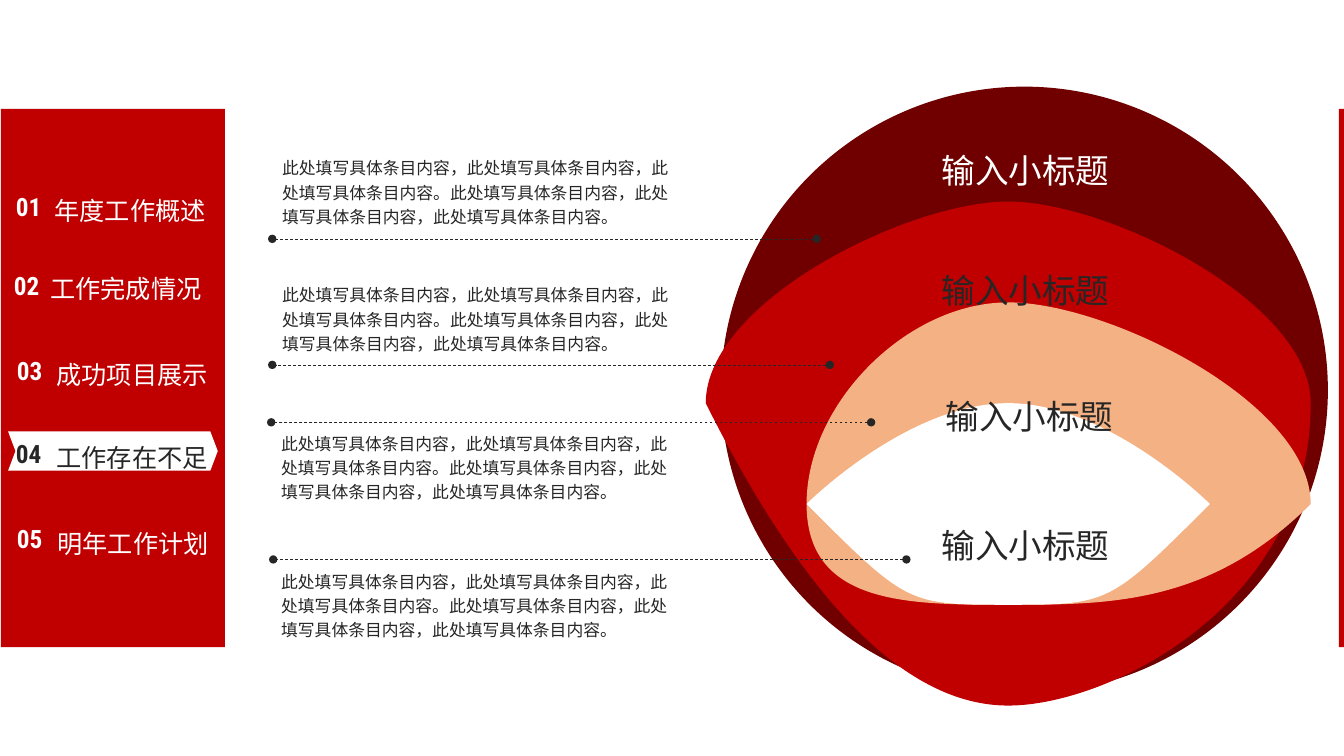
from dataclasses import dataclass

from lxml import etree
from pptx import Presentation
from pptx.dml.color import RGBColor
from pptx.enum.dml import MSO_LINE
from pptx.enum.shapes import MSO_CONNECTOR, MSO_SHAPE
from pptx.enum.text import MSO_AUTO_SIZE, PP_ALIGN
from pptx.oxml.ns import qn
from pptx.slide import Slide
from pptx.util import Inches, Pt

RECTANGLE, CHEVRON, OVAL = MSO_SHAPE.RECTANGLE, MSO_SHAPE.CHEVRON, MSO_SHAPE.OVAL
STRAIGHT, DASH = MSO_CONNECTOR.STRAIGHT, MSO_LINE.DASH
LEFT, CENTER = PP_ALIGN.LEFT, PP_ALIGN.CENTER
GROW = MSO_AUTO_SIZE.SHAPE_TO_FIT_TEXT
BLANK_LAYOUT = 6


@dataclass(frozen=True)
class Theme:
    red: str = "C00000"
    dark_red: str = "700000"
    peach: str = "F4B183"
    white: str = "FFFFFF"
    ink: str = "262626"
    number_font: str = "Roboto Condensed"
    menu_font: str = "Open Sans"
    label_font: str = "Noto Sans CJK SC"
    body_font: str = "Calibri"
    menu_size: int = 18
    label_size: int = 24
    body_size: int = 12


THEME = Theme()


@dataclass(frozen=True)
class TextStyle:
    font: str
    size: int
    color: str
    bold: bool = False
    align: PP_ALIGN = LEFT
    spacing: float = 1.0
    wrap: bool = True


@dataclass(frozen=True)
class MenuItem:
    number: str
    title: str
    number_left: float
    number_top: float
    title_left: float
    title_top: float
    color: str = THEME.white


@dataclass(frozen=True)
class Layer:
    """Closed outline: a start point, then three Bézier points per curve."""
    color: str
    points: tuple[tuple[float, float], ...]


@dataclass(frozen=True)
class Callout:
    text_left: float
    text_top: float
    line_left: float
    line_right: float
    line_y: float


@dataclass(frozen=True)
class Label:
    left: float
    top: float
    color: str = THEME.ink
    height: float = 0.5


BODY_TEXT = ("此处填写具体条目内容，此处填写具体条目内容，此处填写具体条目内容。"
             "此处填写具体条目内容，此处填写具体条目内容，此处填写具体条目内容。")
LABEL_TEXT = "输入小标题"

MENU = (
    MenuItem("01", "年度工作概述", 0.06, 1.85, 0.27, 1.74),
    MenuItem("02", "工作完成情况", 0.04, 2.63, 0.23, 2.51),
    MenuItem("03", "成功项目展示", 0.07, 3.48, 0.29, 3.37),
    MenuItem("04", "工作存在不足", 0.06, 4.3, 0.29, 4.19, THEME.ink),
    MenuItem("05", "明年工作计划", 0.07, 5.14, 0.3, 5.04),
)
LAYERS = (
    Layer(THEME.red, (
        (7.46, 4.44), (7.7, 5.7), (8.82, 6.66), (10.16, 6.66),
        (11.49, 6.66), (12.62, 5.7), (12.86, 4.44),
        (13.07, 3.33), (11.49, 2.22), (10.16, 2.22),
        (8.82, 2.22), (7.27, 3.46), (7.46, 4.44))),
    Layer(THEME.peach, (
        (7.91, 4.8), (8.27, 5.7), (9.17, 6.32), (10.21, 6.32),
        (11.24, 6.32), (12.16, 5.7), (12.51, 4.8),
        (12.7, 4.3), (11.24, 3.26), (10.21, 3.26),
        (9.17, 3.26), (7.74, 4.37), (7.91, 4.8))),
    Layer(THEME.white, (
        (10.18, 5.96), (10.85, 5.96), (11.48, 5.66), (11.87, 5.17),
        (12.12, 4.87), (10.85, 4.39), (10.18, 4.39),
        (9.49, 4.39), (8.19, 4.83), (8.47, 5.17),
        (8.88, 5.66), (9.49, 5.96), (10.18, 5.96))),
)
CALLOUTS = (
    Callout(2.7, 1.48, 2.7, 8.1, 2.37),
    Callout(2.7, 2.74, 2.7, 8.23, 3.62),
    Callout(2.69, 4.21, 2.69, 8.64, 4.19),
    Callout(2.69, 5.58, 2.71, 8.99, 5.55),
)
LABELS = (
    Label(9.24, 1.44, THEME.white),
    Label(9.24, 2.63),
    Label(9.28, 3.88, height=0.91),
    Label(9.24, 5.16),
)


def paint(shape, color: str) -> None:
    shape.shadow.inherit = False
    shape.fill.solid()
    shape.fill.fore_color.rgb = RGBColor.from_string(color)
    shape.line.fill.background()


def add_block(slide: Slide, kind: MSO_SHAPE, left: float, top: float,
              width: float, height: float, color: str):
    block = slide.shapes.add_shape(
        kind, Inches(left), Inches(top), Inches(width), Inches(height))
    paint(block, color)
    return block


def add_text(slide: Slide, text: str, left: float, top: float,
             width: float, height: float, style: TextStyle) -> None:
    frame = slide.shapes.add_textbox(
        Inches(left), Inches(top), Inches(width), Inches(height)).text_frame
    frame.word_wrap = style.wrap
    frame.auto_size = GROW
    frame.text = text
    paragraph = frame.paragraphs[0]
    paragraph.alignment = style.align
    paragraph.line_spacing = style.spacing
    font = paragraph.runs[0].font
    font.name, font.size, font.bold = style.font, Pt(style.size), style.bold
    font.color.rgb = RGBColor.from_string(style.color)
    latin = paragraph.runs[0]._r.rPr.find(qn("a:latin"))
    east_asian = etree.Element(qn("a:ea"), typeface=style.font)
    latin.addnext(east_asian)


def add_layer(slide: Slide, layer: Layer) -> None:
    start, *rest = layer.points
    builder = slide.shapes.build_freeform(*start, scale=Inches(1))
    builder.add_line_segments(rest, close=True)
    outline = builder.convert_to_shape()
    paint(outline, layer.color)
    # Turn every three straight segments into one Bézier curve
    segments = list(outline._element.iter(qn("a:lnTo")))
    for first in range(0, len(rest), 3):
        curve = etree.Element(qn("a:cubicBezTo"))
        segments[first].addprevious(curve)
        for segment in segments[first:first + 3]:
            curve.append(segment[0])
            segment.getparent().remove(segment)


def add_leader(slide: Slide, callout: Callout) -> None:
    y = Inches(callout.line_y)
    leader = slide.shapes.add_connector(
        STRAIGHT, Inches(callout.line_right), y, Inches(callout.line_left), y)
    leader.line.color.rgb = RGBColor.from_string(THEME.ink)
    leader.line.width = Pt(0.5)
    leader.line.dash_style = DASH
    for end in ("a:headEnd", "a:tailEnd"):
        etree.SubElement(leader.line._ln, qn(end), type="oval")
    etree.SubElement(leader._element.spPr, qn("a:effectLst"))


def main() -> None:
    presentation = Presentation()
    presentation.slide_width = Inches(13.33)
    presentation.slide_height = Inches(7.5)
    slide = presentation.slides.add_slide(presentation.slide_layouts[BLANK_LAYOUT])

    # Side menu with the current section marked
    add_block(slide, RECTANGLE, 0.01, 1.08, 2.22, 5.34, THEME.red)
    marker = add_block(slide, CHEVRON, 0.08, 4.28, 2.08, 0.39, THEME.white)
    marker.adjustments[0] = 0.189
    for item in MENU:
        number_style = TextStyle(THEME.number_font, THEME.menu_size, item.color, bold=True)
        title_style = TextStyle(THEME.menu_font, THEME.menu_size, item.color,
                                align=CENTER, spacing=1.5)
        add_text(slide, item.number, item.number_left, item.number_top, 0.56, 0.4, number_style)
        add_text(slide, item.title, item.title_left, item.title_top, 2.04, 0.5, title_style)

    # Nested layers
    add_block(slide, OVAL, 7.15, 0.86, 6.02, 6.02, THEME.dark_red)
    for layer in LAYERS:
        add_layer(slide, layer)

    # Descriptions and their leader lines
    body_style = TextStyle(THEME.body_font, THEME.body_size, THEME.ink, spacing=1.2)
    for callout in CALLOUTS:
        add_leader(slide, callout)
        add_text(slide, BODY_TEXT, callout.text_left, callout.text_top, 4.08, 0.83, body_style)

    # Layer labels
    for label in LABELS:
        label_style = TextStyle(THEME.label_font, THEME.label_size, label.color, wrap=False)
        add_text(slide, LABEL_TEXT, label.left, label.top, 1.88, label.height, label_style)

    # Right edge strip
    add_block(slide, RECTANGLE, 13.28, 1.08, 0.05, 5.34, THEME.red)

    presentation.save("out.pptx")


if __name__ == "__main__":
    main()
